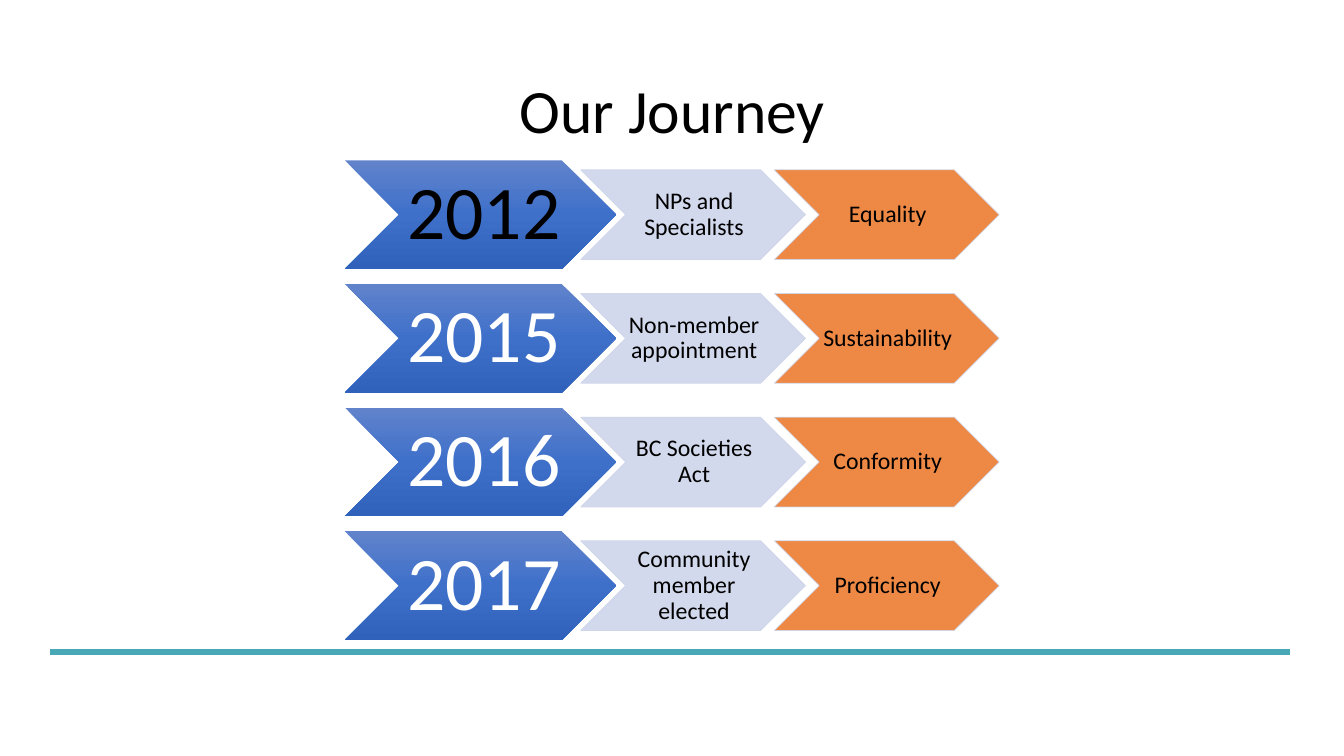
from copy import deepcopy

from pptx import Presentation
from pptx.dml.color import RGBColor
from pptx.enum.shapes import MSO_CONNECTOR, MSO_SHAPE
from pptx.enum.text import MSO_ANCHOR, PP_ALIGN
from pptx.oxml.ns import qn
from pptx.oxml.xmlchemy import OxmlElement
from pptx.util import Inches, Pt

COLORS = {
    "dark": "000000", "light": "FFFFFF", "rule": "49A8B6",
    "year_top": "6183CB", "year_middle": "3E70CA", "year_bottom": "3062BB",
    "event": "CFD5EA", "value": "ED7D31", "outline": "CFD5EA",
}
FONT = "Calibri"
MILESTONES = [
    ("2012", "NPs and Specialists", "Equality"),
    ("2015", "Non-member appointment", "Sustainability"),
    ("2016", "BC Societies Act", "Conformity"),
    ("2017", "Community member elected", "Proficiency"),
]

# Grid in inches: the year leads each row, the smaller steps are centred on it
FIRST_ROW, ROW_PITCH = 1.59, 1.2267
YEAR_LEFT, YEAR_SIZE = 3.42, (2.69, 1.08)
STEP_LEFT, STEP_PITCH, STEP_SIZE = 5.76, 1.92, (2.23, 0.89)
YEAR_MARGINS = {"margin_left": 0.07, "margin_top": 0.04,
                "margin_right": 0, "margin_bottom": 0.04}
STEP_MARGINS = {"margin_left": 0.02, "margin_top": 0.01,
                "margin_right": 0, "margin_bottom": 0.01}


def rgb(name):
    return RGBColor.from_string(COLORS[name])


def write_centred(frame, text, size, color):
    frame.text = text
    frame.word_wrap = True
    frame.vertical_anchor = MSO_ANCHOR.MIDDLE
    paragraph = frame.paragraphs[0]
    paragraph.alignment = PP_ALIGN.CENTER
    paragraph.line_spacing = 0.9
    font = paragraph.runs[0].font
    for name, value in {"name": FONT, "size": Pt(size)}.items():
        setattr(font, name, value)
    font.color.rgb = rgb(color)


def add_title(slide, text):
    title = slide.shapes.title
    box = {"left": 0.92, "top": 0.4, "width": 11.5, "height": 1.45}
    for name, value in box.items():
        setattr(title, name, Inches(value))
    write_centred(title.text_frame, text, 44, "dark")


def add_rule(slide):
    rule = slide.shapes.add_connector(
        MSO_CONNECTOR.STRAIGHT,
        Inches(0.5), Inches(6.47), Inches(12.79), Inches(6.47))
    rule.line.color.rgb = rgb("rule")
    rule.line.width = Pt(4.5)
    rule.element.spPr.append(OxmlElement("a:effectLst"))


def add_chevron(timeline, left, top, size, text, font_size, color, margins):
    chevron = timeline.shapes.add_shape(
        MSO_SHAPE.CHEVRON, *(Inches(length) for length in (left, top, *size)))
    chevron.shadow.inherit = False
    write_centred(chevron.text_frame, text, font_size, color)
    for name, value in margins.items():
        setattr(chevron.text_frame, name, Inches(value))
    return chevron


def shade_year(chevron):
    """Fill with three stops running from top to bottom."""
    fill = chevron.fill
    fill.gradient()
    fill.gradient_angle = 270
    first_stop = chevron.element.spPr.find(".//" + qn("a:gs"))
    first_stop.addnext(deepcopy(first_stop))
    shades = ("year_top", "year_middle", "year_bottom")
    for index, (stop, shade) in enumerate(zip(fill.gradient_stops, shades)):
        stop.position = index / 2
        stop.color.rgb = rgb(shade)
    chevron.line.fill.background()


def tint_step(chevron, color):
    """Fill and outline at 90 % opacity."""
    chevron.fill.solid()
    chevron.fill.fore_color.rgb = rgb(color)
    chevron.line.color.rgb = rgb("outline")
    chevron.line.width = Pt(0.5)
    for paint in list(chevron.element.spPr.iter(qn("a:srgbClr"))):
        alpha = OxmlElement("a:alpha")
        alpha.set("val", "90000")
        paint.append(alpha)


def add_milestone(timeline, row, year, steps):
    top = FIRST_ROW + row * ROW_PITCH
    year_color = "light" if row else "dark"
    shade_year(add_chevron(timeline, YEAR_LEFT, top, YEAR_SIZE,
                           year, 54, year_color, YEAR_MARGINS))
    step_top = top + (YEAR_SIZE[1] - STEP_SIZE[1]) / 2
    for column, (step, color) in enumerate(zip(steps, ("event", "value"))):
        left = STEP_LEFT + column * STEP_PITCH
        tint_step(add_chevron(timeline, left, step_top, STEP_SIZE,
                              step, 17, "dark", STEP_MARGINS), color)


def main():
    deck = Presentation()
    deck.slide_width, deck.slide_height = Inches(13.33), Inches(7.5)
    slide = deck.slides.add_slide(deck.slide_layouts.get_by_name("Title Only"))
    add_title(slide, "Our Journey")
    add_rule(slide)
    timeline = slide.shapes.add_group_shape()
    for row, (year, *steps) in enumerate(MILESTONES):
        add_milestone(timeline, row, year, steps)
    deck.save("out.pptx")


if __name__ == "__main__":
    main()
